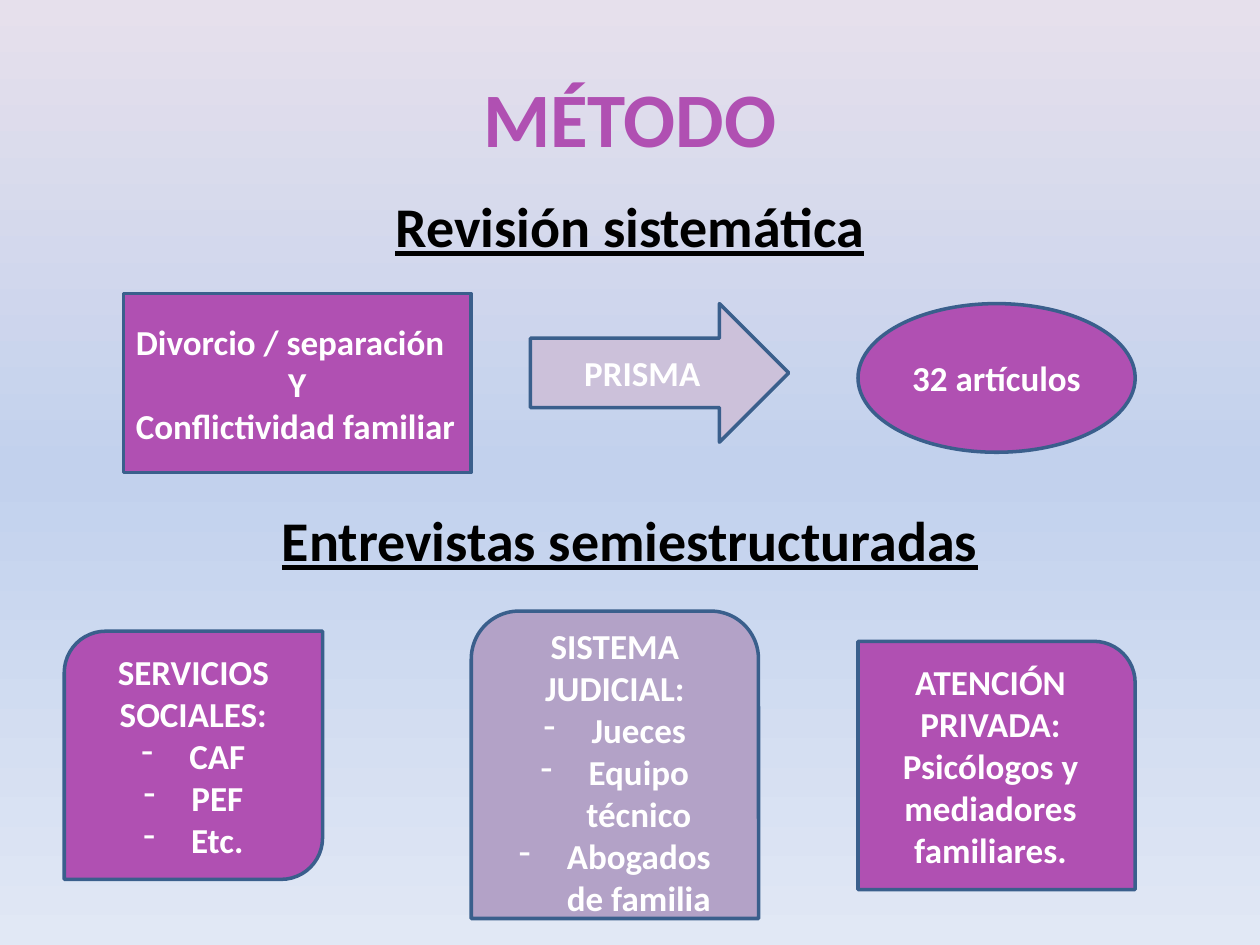
from dataclasses import dataclass

from lxml.etree import SubElement
from pptx import Presentation
from pptx.dml.color import RGBColor
from pptx.enum.shapes import MSO_SHAPE as Shape
from pptx.enum.text import MSO_ANCHOR as Anchor, PP_ALIGN as Align
from pptx.oxml.ns import qn
from pptx.util import Inches, Pt

PURPLE = RGBColor(0xB0, 0x50, 0xB2)
LILAC = RGBColor(0xCC, 0xC1, 0xDA)
MAUVE = RGBColor(0xB3, 0xA2, 0xC7)
OUTLINE = RGBColor(0x3A, 0x5F, 0x8C)
WHITE = RGBColor(0xFF, 0xFF, 0xFF)
BLACK = RGBColor(0, 0, 0)
BACKGROUND = ((0, "E6E0EC"), (50, "C2D1ED"), (100, "E1E8F5"))


@dataclass
class Heading:
    text: str
    top: float
    height: float
    size: int
    color: RGBColor
    underline: bool = False


@dataclass
class Card:
    kind: Shape
    left: float
    top: float
    width: float
    height: float
    fill: RGBColor
    lines: tuple[str, ...]
    bullets: tuple[str, ...] = ()
    aligns: tuple[Align, ...] = ()


HEADINGS = (
    Heading("MÉTODO", 0.3, 1.25, 44, PURPLE),
    Heading("Revisión sistemática", 1.47, 0.64, 32, BLACK, True),
    Heading("Entrevistas semiestructuradas", 3.96, 0.64, 32, BLACK, True),
)
CARDS = (
    Card(Shape.RECTANGLE, 0.98, 2.33, 2.76, 1.42, PURPLE,
         ("Divorcio / separación", "Y", "Conflictividad familiar"),
         aligns=(Align.LEFT, Align.CENTER, Align.LEFT)),
    Card(Shape.RIGHT_ARROW, 4.21, 2.41, 2.05, 1.1, LILAC, ("PRISMA",)),
    Card(Shape.OVAL, 6.81, 2.41, 2.2, 1.18, PURPLE, ("32 artículos",)),
    Card(Shape.ROUND_2_DIAG_RECTANGLE, 0.51, 5.01, 2.05, 1.97, PURPLE,
         ("SERVICIOS SOCIALES:",), ("CAF", "PEF", "Etc.")),
    Card(Shape.ROUND_2_SAME_RECTANGLE, 3.74, 4.85, 2.28, 2.44, MAUVE,
         ("SISTEMA JUDICIAL:",),
         ("Jueces", "Equipo técnico", "Abogados de familia")),
    Card(Shape.ROUND_1_RECTANGLE, 6.81, 5.09, 2.2, 1.97, PURPLE,
         ("ATENCIÓN PRIVADA:", "Psicólogos y mediadores familiares.")),
)


def paint_background(page) -> None:
    fill = page.background.fill
    fill.gradient()
    fill.gradient_angle = 270
    stops = page.element.find(".//" + qn("a:gsLst"))
    stops.clear()
    for percent, color in BACKGROUND:
        stop = SubElement(stops, qn("a:gs"), pos=str(percent * 1000))
        SubElement(stop, qn("a:srgbClr"), val=color)


def write(para, text: str, size: int, color: RGBColor, align: Align) -> None:
    para.text = text
    para.alignment = align
    para.font.name = "Calibri"
    para.font.size = Pt(size)
    para.font.bold = True
    para.font.color.rgb = color


def add_dash(para) -> None:
    """Give the paragraph a hanging dash bullet."""
    props = para._p.get_or_add_pPr()
    props.set("marL", str(Inches(0.38)))
    props.set("indent", str(-Inches(0.38)))
    bullet = SubElement(props, qn("a:buChar"), char="-")
    props.remove(bullet)
    props.insert_element_before(bullet, "a:tabLst", "a:defRPr", "a:extLst")


def add_heading(page, heading: Heading) -> None:
    box = page.shapes.add_textbox(Inches(0.5), Inches(heading.top),
                                  Inches(9), Inches(heading.height))
    frame = box.text_frame
    frame.word_wrap = True
    frame.vertical_anchor = Anchor.MIDDLE
    para = frame.paragraphs[0]
    write(para, heading.text, heading.size, heading.color, Align.CENTER)
    para.font.underline = heading.underline


def add_card(page, card: Card) -> None:
    shape = page.shapes.add_shape(card.kind, Inches(card.left), Inches(card.top),
                                  Inches(card.width), Inches(card.height))
    shape.shadow.inherit = False
    shape.fill.solid()
    shape.fill.fore_color.rgb = card.fill
    shape.line.color.rgb = OUTLINE
    shape.line.width = Pt(2)
    frame = shape.text_frame
    frame.word_wrap = True
    frame.vertical_anchor = Anchor.MIDDLE
    for index, text in enumerate(card.lines + card.bullets):
        para = frame.add_paragraph() if index else frame.paragraphs[0]
        align = card.aligns[index] if card.aligns else Align.CENTER
        write(para, text, 20, WHITE, align)
        if index >= len(card.lines):
            add_dash(para)


def main() -> None:
    deck = Presentation()
    deck.slide_width, deck.slide_height = Inches(10), Inches(7.5)
    page = deck.slides.add_slide(deck.slide_layouts[6])
    paint_background(page)
    for heading in HEADINGS:
        add_heading(page, heading)
    for card in CARDS:
        add_card(page, card)
    deck.save("out.pptx")


if __name__ == "__main__":
    main()
